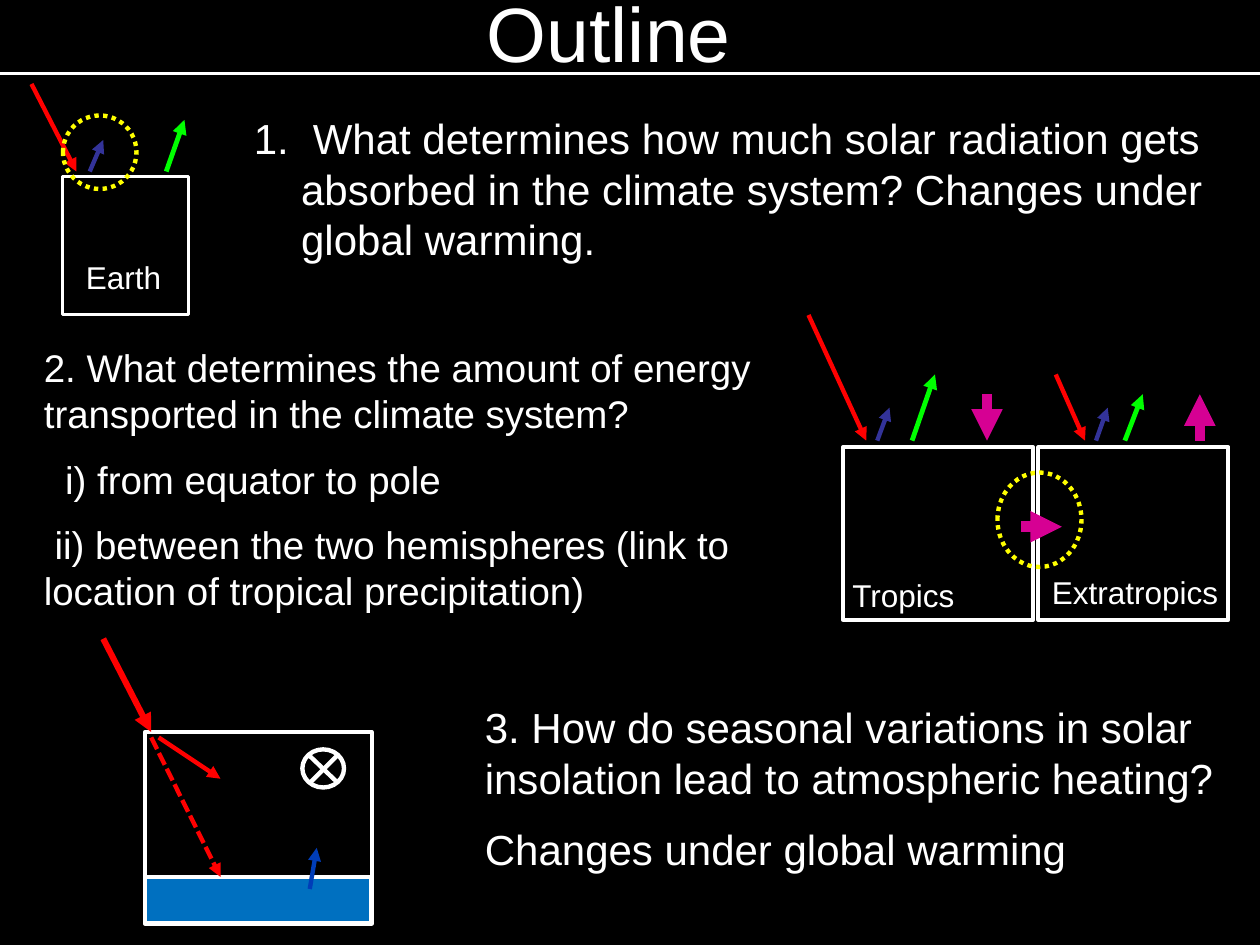
import pptx
import pptx.util
import pptx.dml.color
import pptx.enum.dml
import pptx.enum.shapes
import pptx.enum.text
import pptx.oxml
import lxml.etree

Pt = pptx.util.Pt
Rgb = pptx.dml.color.RGBColor.from_string
Kind = pptx.enum.shapes.MSO_SHAPE
Dash = pptx.enum.dml.MSO_LINE
Align = pptx.enum.text.PP_ALIGN
Anchor = pptx.enum.text.MSO_ANCHOR
Fit = pptx.enum.text.MSO_AUTO_SIZE
NS = "http://schemas.openxmlformats.org/drawingml/2006/main"


class Theme:
    font = "Arial"
    back, ink = "000000", "FFFFFF"
    sun, short, long = "FF0000", "333399", "00FF00"
    flux, ring, sea, heat = "D60093", "FFFF00", "0070C0", "003DB8"
    title, large, body, label = 44, 24, 22, 18


deck = pptx.Presentation()
deck.slide_width, deck.slide_height = Pt(720), Pt(540)
slide = deck.slides.add_slide(deck.slide_layouts[5])
slide.background.fill.solid()
slide.background.fill.fore_color.rgb = Rgb(Theme.back)


def write(text, box, size, shape=None, align=Align.LEFT, anchor=Anchor.TOP,
          indents=(), number=False):
    """Fill a shape, or a new text box, with one paragraph per line of text."""
    shape = shape or slide.shapes.add_textbox(0, 0, 0, 0)
    shape.left, shape.top, shape.width, shape.height = map(Pt, box)
    frame = shape.text_frame
    frame.word_wrap, frame.auto_size = True, Fit.NONE
    frame.vertical_anchor = anchor
    frame.text = text
    for i, para in enumerate(frame.paragraphs):
        props = para._p.get_or_add_pPr()
        if number:
            props.set("marL", str(Pt(27)))
            props.set("indent", str(Pt(-27)))
            lxml.etree.SubElement(props, f"{{{NS}}}buFont", typeface="+mj-lt")
            lxml.etree.SubElement(props, f"{{{NS}}}buAutoNum", type="arabicPeriod")
        elif indents:
            props.set("indent", str(Pt(indents[i])))
        para.alignment = align
        if i:
            para.space_before = Pt(size / 2)
        para.font.name, para.font.size = Theme.font, Pt(size)
        para.font.color.rgb = Rgb(Theme.ink)


write("Outline", (24, -12, 648, 60), Theme.title, shape=slide.shapes.title,
      align=Align.CENTER, anchor=Anchor.MIDDLE)

earth = (36, 101, 72, 79)
tropics = (481.7, 255.6, 108.7, 98.6)
extra = (593.3, 255.6, 108.7, 98.6)
air = (82.8, 418.3, 129.6, 109.4)
ocean = (82.8, 501.1, 129.6, 26.6)
boxes = [
    (Kind.RECTANGLE, earth, Theme.back, 1.75),
    (Kind.RECTANGLE, tropics, Theme.back, 2.25),
    (Kind.RECTANGLE, extra, Theme.back, 2.25),
    (Kind.RECTANGLE, air, Theme.back, 2.25),
    (Kind.FLOWCHART_PROCESS, ocean, Theme.sea, 2.5),
]
rings = [
    (Kind.OVAL, (36, 66, 42, 42), Theme.ring, Dash.ROUND_DOT),
    (Kind.OVAL, (570, 270, 48, 54), Theme.ring, Dash.ROUND_DOT),
    (Kind.OVAL, (172.8, 428.2, 23.8, 21.8), Theme.ink, None),
]

for kind, box, fill, width in boxes:
    shape = slide.shapes.add_shape(kind, *map(Pt, box))
    shape.shadow.inherit = False
    shape.fill.solid()
    shape.fill.fore_color.rgb = Rgb(fill)
    shape.line.color.rgb = Rgb(Theme.ink)
    shape.line.width = Pt(width)

# Start, end, colour, width, arrowhead, dash
lines = [
    # Title rule
    (0, 42, 720, 42, Theme.ink, 1.75, None, None),
    # Earth
    (18, 48, 43.7, 98, Theme.sun, 2.5, "tailEnd", None),
    (51.3, 98, 59, 80, Theme.short, 2.5, "tailEnd", None),
    (95, 98, 105.4, 68.5, Theme.long, 2.75, "tailEnd", None),
    # Tropics and extratropics
    (462, 180, 495, 251.8, Theme.sun, 2.5, "tailEnd", None),
    (603.3, 214, 620, 251.8, Theme.sun, 2.5, "tailEnd", None),
    (501.3, 251.8, 508.3, 233, Theme.short, 2.5, "tailEnd", None),
    (626.3, 251.8, 633, 233, Theme.short, 2.5, "tailEnd", None),
    (521.2, 251.8, 534.3, 214, Theme.long, 2.75, "tailEnd", None),
    (642.8, 251.8, 653, 225.3, Theme.long, 2.75, "tailEnd", None),
    (564, 225.3, 564, 251.8, Theme.flux, 6, "tailEnd", None),
    (685.6, 225.3, 685.6, 251.8, Theme.flux, 6, "headEnd", None),
    (583.7, 301, 606.8, 301, Theme.flux, 6, "tailEnd", None),
    # Atmosphere over ocean
    (59, 365, 86.4, 418.3, Theme.sun, 3.5, "tailEnd", None),
    (90.7, 421.4, 126, 445, Theme.sun, 2.5, "tailEnd", None),
    (86.4, 421.4, 126, 501.1, Theme.sun, 2.5, "tailEnd", Dash.SQUARE_DOT),
    (177, 508, 181, 484.5, Theme.heat, 2.5, "tailEnd", None),
    (176.5, 431.5, 193, 447.3, Theme.ink, 2.5, None, None),
    (176.8, 447.6, 193, 431.5, Theme.ink, 2.5, None, None),
]
for *ends, color, width, head, dash in lines:
    link = slide.shapes.add_connector(
        pptx.enum.shapes.MSO_CONNECTOR.STRAIGHT, *map(Pt, ends))
    link.line.color.rgb = Rgb(color)
    link.line.width = Pt(width)
    if dash:
        link.line.dash_style = dash
    if head:
        lxml.etree.SubElement(link.line._get_or_add_ln(), f"{{{NS}}}{head}",
                              type="triangle")
    lxml.etree.SubElement(link._element.spPr, f"{{{NS}}}effectLst")

for kind, box, color, dash in rings:
    shape = slide.shapes.add_shape(kind, *map(Pt, box))
    shape.shadow.inherit = False
    shape.fill.background()
    shape.line.color.rgb = Rgb(color)
    shape.line.width = Pt(2.5)
    if dash:
        shape.line.dash_style = dash

write(" What determines how much solar radiation gets absorbed in the climate "
      "system? Changes under global warming.",
      (138, 61, 594, 94.5), Theme.large, number=True)
write("2. What determines the amount of energy transported in the climate system?\n"
      "i) from equator to pole\n"
      "ii) between the two hemispheres (link to location of tropical precipitation)",
      (18, 193, 426, 167), Theme.body, indents=(0, 12.2, 6.1))
write("3. How do seasonal variations in solar insolation lead to atmospheric "
      "heating?\nChanges under global warming",
      (270, 397.5, 462, 108.7), Theme.large)
write("Earth", (42, 144, 60, 29), Theme.label)
write("Tropics", (480, 325.5, 90, 29), Theme.label)
write("Extratropics", (594, 324, 120, 29), Theme.label)

deck.save("out.pptx")
